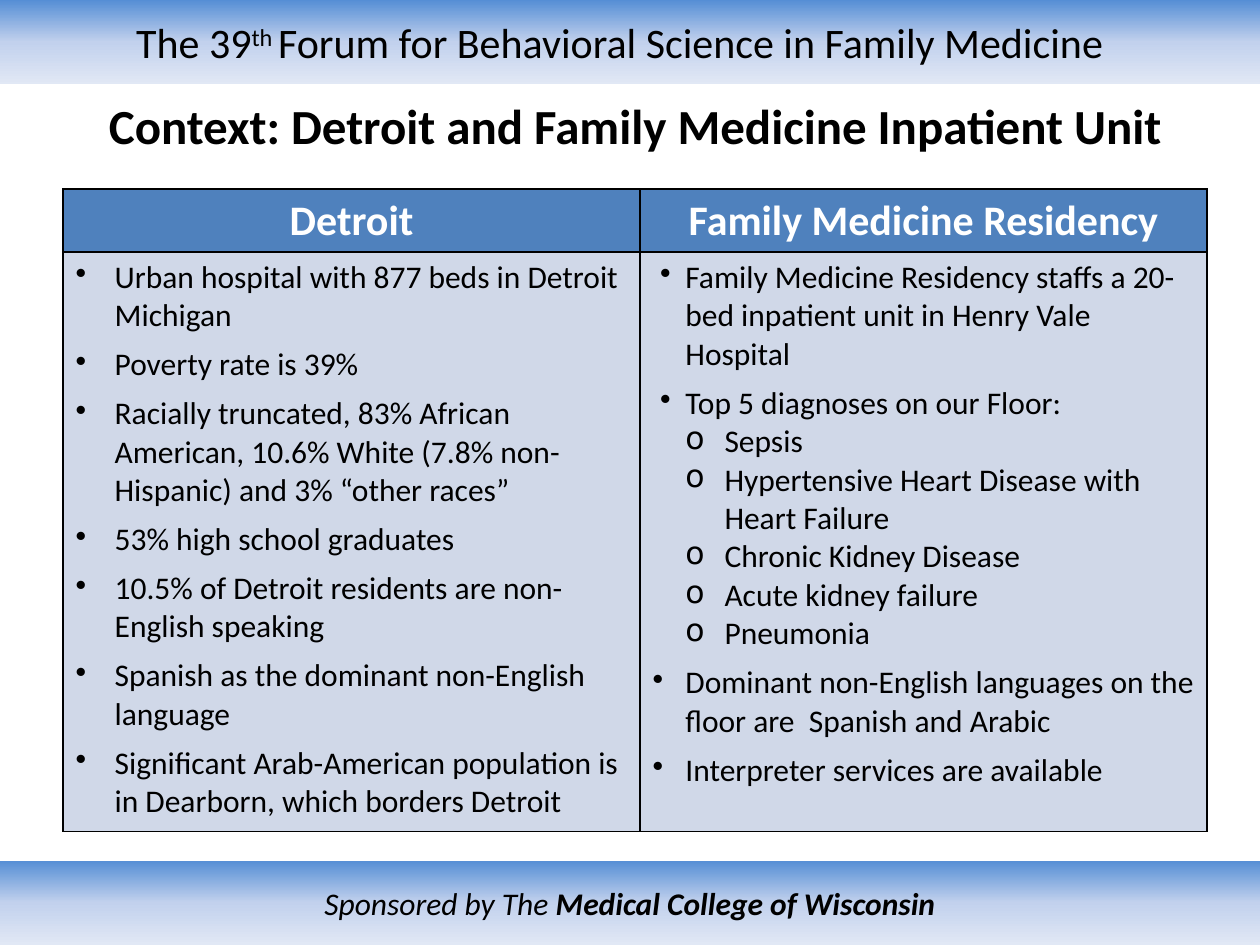
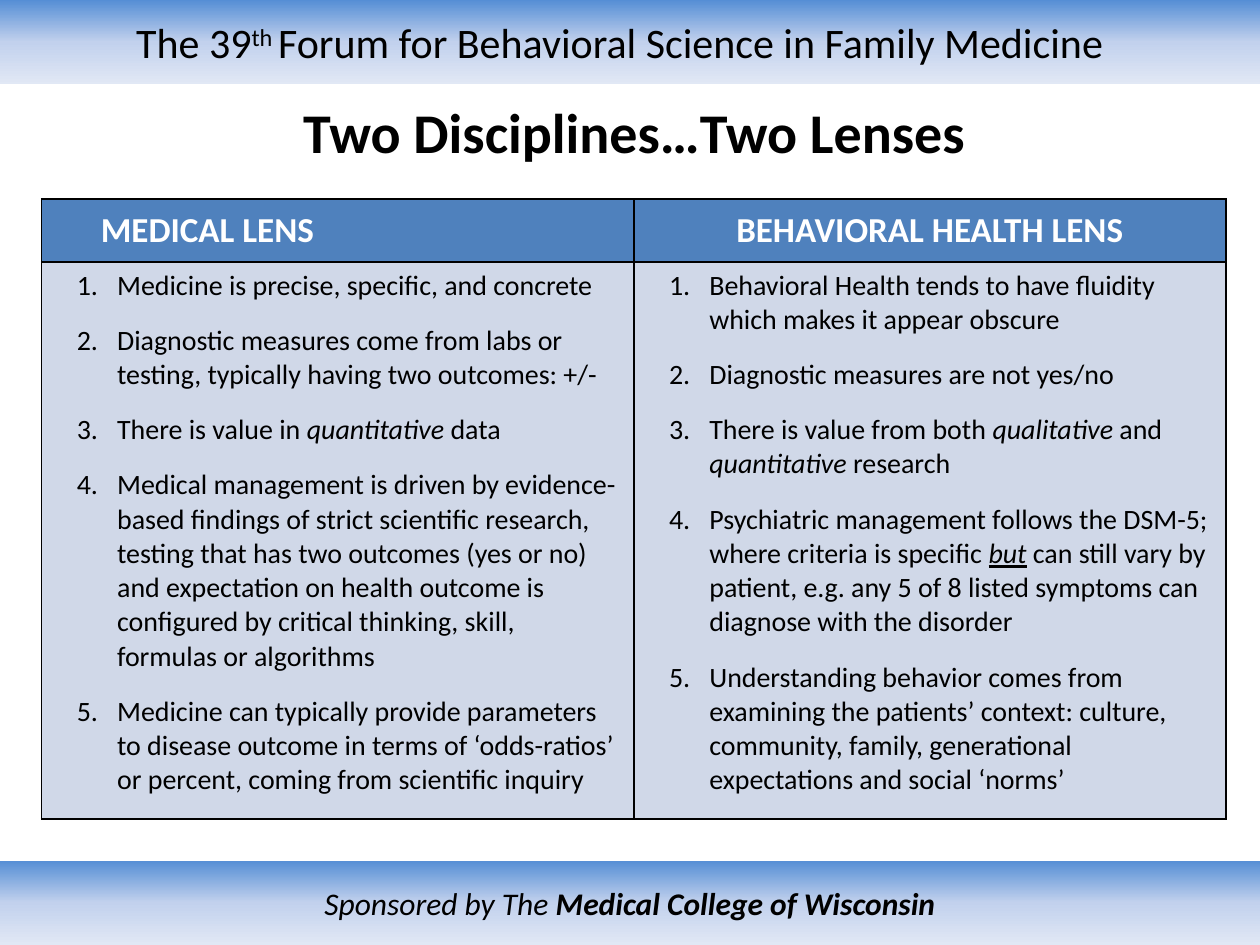
from typing import NamedTuple

from lxml.etree import SubElement
from pptx import Presentation
from pptx.dml.color import RGBColor
from pptx.enum.shapes import MSO_SHAPE
from pptx.enum.text import MSO_ANCHOR, PP_ALIGN
from pptx.oxml import parse_xml
from pptx.oxml.ns import nsdecls, qn
from pptx.util import Inches, Pt

BLACK = RGBColor(0x00, 0x00, 0x00)
WHITE = RGBColor(0xFF, 0xFF, 0xFF)
BLUE = RGBColor(0x4F, 0x81, 0xBD)
PALE = RGBColor(0xD0, 0xD8, 0xE8)
FADE = (
    (0, RGBColor(0x55, 0x8E, 0xD5)),
    (50, RGBColor(0xC2, 0xD1, 0xED)),
    (100, RGBColor(0xE1, 0xE8, 0xF5)),
)
FONT = "Calibri"
WIDE, HIGH, BAND = 10, 7.5, 0.67


class Bit(NamedTuple):
    text: str
    bold: bool | None = None
    slant: bool | None = None
    under: bool | None = None
    raised: bool = False


class Mark(NamedTuple):
    left: float
    hang: float
    sign: str = "•"
    before: float = 6
    after: float = 0


class Line(NamedTuple):
    mark: Mark
    bits: list[Bit]


class Band(NamedTuple):
    top: float
    size: float
    bits: list[Bit]
    slant: bool = False
    right: float = 0.1


class Head(NamedTuple):
    text: str
    indent: float | None = None


class Page(NamedTuple):
    title: str
    title_at: tuple[float, float, float, float]
    title_size: float
    table_at: tuple[float, float]
    cols: tuple[float, float]
    rows: tuple[float, float]
    heads: list[Head]
    head_size: float
    lists: list[list[Line]]
    list_size: float


def lines(mark: Mark, *texts: str | list[Bit]) -> list[Line]:
    return [Line(mark, [Bit(t)] if isinstance(t, str) else t) for t in texts]


MAIN = Mark(0.31, 0.31)
NEAR = Mark(0.26, 0.2)
LAST = Mark(0.26, 0.26)
SUB = Mark(0.57, 0.31, "o", 0)
COUNT = Mark(0.5, 0.32, "1.", 0, 12)

BANDS = [
    Band(0, 24, [
        Bit("The 39"),
        Bit("th ", raised=True),
        Bit("Forum for Behavioral Science in Family Medicine"),
    ], right=0.26),
    Band(HIGH - BAND, 18, [
        Bit("Sponsored by The "),
        Bit("Medical College of Wisconsin", bold=True),
    ], slant=True),
]

DETROIT = lines(
    MAIN,
    "Urban hospital with 877 beds in Detroit Michigan",
    "Poverty rate is 39%",
    "Racially truncated, 83% African American, 10.6% White "
    "(7.8% non-Hispanic) and 3% “other races”",
    "53% high school graduates",
    "10.5% of Detroit residents are non-English speaking",
    "Spanish as the dominant non-English language",
    "Significant Arab-American population is in Dearborn, "
    "which borders Detroit",
)
CLINIC = [
    *lines(
        NEAR,
        "Family Medicine Residency staffs a 20-bed inpatient unit "
        "in Henry Vale Hospital",
        "Top 5 diagnoses on our Floor:",
    ),
    *lines(
        SUB,
        "Sepsis",
        "Hypertensive Heart Disease with Heart Failure",
        "Chronic Kidney Disease",
        "Acute kidney failure",
        "Pneumonia",
    ),
    *lines(
        LAST,
        "Dominant non-English languages on the floor are  Spanish and Arabic",
        "Interpreter services are available",
    ),
]
MEDICAL = lines(
    COUNT,
    "Medicine is precise, specific, and concrete",
    "Diagnostic measures come from labs or testing, "
    "typically having two outcomes: +/-",
    [Bit("There is value in "), Bit("quantitative", slant=True), Bit(" data")],
    "Medical management is driven by evidence-based findings of strict "
    "scientific research, testing that has two outcomes (yes or no) and "
    "expectation on health outcome is configured by critical thinking, "
    "skill, formulas or algorithms",
    "Medicine can typically provide parameters to disease outcome in terms "
    "of ‘odds-ratios’ or percent, coming from scientific inquiry",
)
MENTAL = lines(
    COUNT,
    "Behavioral Health tends to have fluidity which makes it appear obscure",
    "Diagnostic measures are not yes/no",
    [
        Bit("There is value from both "),
        Bit("qualitative", slant=True),
        Bit(" and "),
        Bit("quantitative", slant=True),
        Bit(" research"),
    ],
    [
        Bit("Psychiatric management follows the DSM-5; "
            "where criteria is specific "),
        Bit("but", slant=True, under=True),
        Bit(" can still vary by patient, e.g. any 5 of 8 listed symptoms "
            "can diagnose with the disorder"),
    ],
    "Understanding behavior comes from examining the patients’ context: "
    "culture, community, family, generational expectations "
    "and social ‘norms’",
)

PAGES = [
    Page(
        "Context: Detroit and Family Medicine Inpatient Unit",
        (0.54, 0.83, 9, 0.33), 28,
        (0.5, 1.5), (4.58, 4.5), (0.5, 4.6),
        [Head("Detroit"), Head("Family Medicine Residency")], 24,
        [DETROIT, CLINIC], 18,
    ),
    Page(
        "Two Disciplines…Two Lenses",
        (2.06, 0.75, 5.95, 0.58), 32,
        (0.33, 1.58), (4.7, 4.7), (0.5, 4.42),
        [Head("MEDICAL LENS", 0.37), Head("BEHAVIORAL HEALTH LENS")], 20,
        [MEDICAL, MENTAL], 16,
    ),
]


def write(para, bits: list[Bit], size: float, color=BLACK,
          bold=False, slant=False, align=PP_ALIGN.CENTER) -> None:
    para.alignment = align
    font = para.font
    font.name, font.size = FONT, Pt(size)
    font.bold, font.italic = bold, slant
    font.color.rgb = color
    for bit in bits:
        run = para.add_run()
        run.text = bit.text
        run.font.bold = bit.bold
        run.font.italic = bit.slant
        run.font.underline = bit.under
        if bit.raised:
            run._r.get_or_add_rPr().set("baseline", "30000")


def indent(para, left: float, hang: float = 0) -> None:
    props = para._p.get_or_add_pPr()
    props.set("marL", str(Inches(left)))
    props.set("indent", str(-Inches(hang)))


def add_mark(para, mark: Mark, first: bool) -> None:
    indent(para, mark.left, mark.hang)
    props = para._p.get_or_add_pPr()
    if mark.sign == "1.":
        SubElement(props, qn("a:buAutoNum"), type="arabicPeriod")
    else:
        SubElement(props, qn("a:buChar"), char=mark.sign)
    para.space_before = Pt(0 if first else mark.before)
    para.space_after = Pt(mark.after)


def add_band(slide, band: Band) -> None:
    shape = slide.shapes.add_shape(
        MSO_SHAPE.RECTANGLE, 0, Inches(band.top), Inches(WIDE), Inches(BAND))
    shape.shadow.inherit = False
    shape.line.fill.background()
    stops = "".join(
        f'<a:gs pos="{pos * 1000}"><a:srgbClr val="{color}"/></a:gs>'
        for pos, color in FADE)
    fade = parse_xml(
        f'<a:gradFill {nsdecls("a")} rotWithShape="1"><a:gsLst>{stops}</a:gsLst>'
        '<a:lin ang="5400000" scaled="0"/></a:gradFill>')
    shape._element.spPr.find(qn("a:prstGeom")).addnext(fade)
    frame = shape.text_frame
    frame.margin_right = Inches(band.right)
    frame.vertical_anchor = MSO_ANCHOR.MIDDLE
    write(frame.paragraphs[0], band.bits, band.size, slant=band.slant)


def add_title(slide, page: Page) -> None:
    frame = slide.shapes.add_textbox(*map(Inches, page.title_at)).text_frame
    frame.word_wrap = True
    frame.vertical_anchor = MSO_ANCHOR.MIDDLE
    write(frame.paragraphs[0], [Bit(page.title)], page.title_size, bold=True)


def paint(cell, color: RGBColor) -> None:
    props = cell._tc.get_or_add_tcPr()
    for side in ("lnL", "lnR", "lnT", "lnB"):
        edge = SubElement(props, qn(f"a:{side}"), w=str(Pt(1)))
        fill = SubElement(edge, qn("a:solidFill"))
        SubElement(fill, qn("a:srgbClr"), val=str(BLACK))
    cell.fill.solid()
    cell.fill.fore_color.rgb = color


def add_grid(slide, page: Page) -> None:
    table = slide.shapes.add_table(
        2, 2, *map(Inches, page.table_at),
        Inches(sum(page.cols)), Inches(sum(page.rows))).table
    for row, high in zip(table.rows, page.rows):
        row.height = Inches(high)
    for col, (wide, head, items) in enumerate(
            zip(page.cols, page.heads, page.lists)):
        table.columns[col].width = Inches(wide)
        top, body = table.cell(0, col), table.cell(1, col)
        paint(top, BLUE)
        paint(body, PALE)
        top.vertical_anchor = MSO_ANCHOR.MIDDLE
        para = top.text_frame.paragraphs[0]
        align = PP_ALIGN.CENTER
        if head.indent is not None:
            indent(para, head.indent)
            align = PP_ALIGN.LEFT
        write(para, [Bit(head.text)], page.head_size, WHITE, True, align=align)
        frame = body.text_frame
        for pos, item in enumerate(items):
            para = frame.add_paragraph() if pos else frame.paragraphs[0]
            add_mark(para, item.mark, pos == 0)
            write(para, item.bits, page.list_size, align=PP_ALIGN.LEFT)


def main() -> None:
    deck = Presentation()
    deck.slide_width, deck.slide_height = Inches(WIDE), Inches(HIGH)
    for page in PAGES:
        slide = deck.slides.add_slide(deck.slide_layouts[6])
        for band in BANDS:
            add_band(slide, band)
        add_title(slide, page)
        add_grid(slide, page)
    deck.save("out.pptx")


if __name__ == "__main__":
    main()
